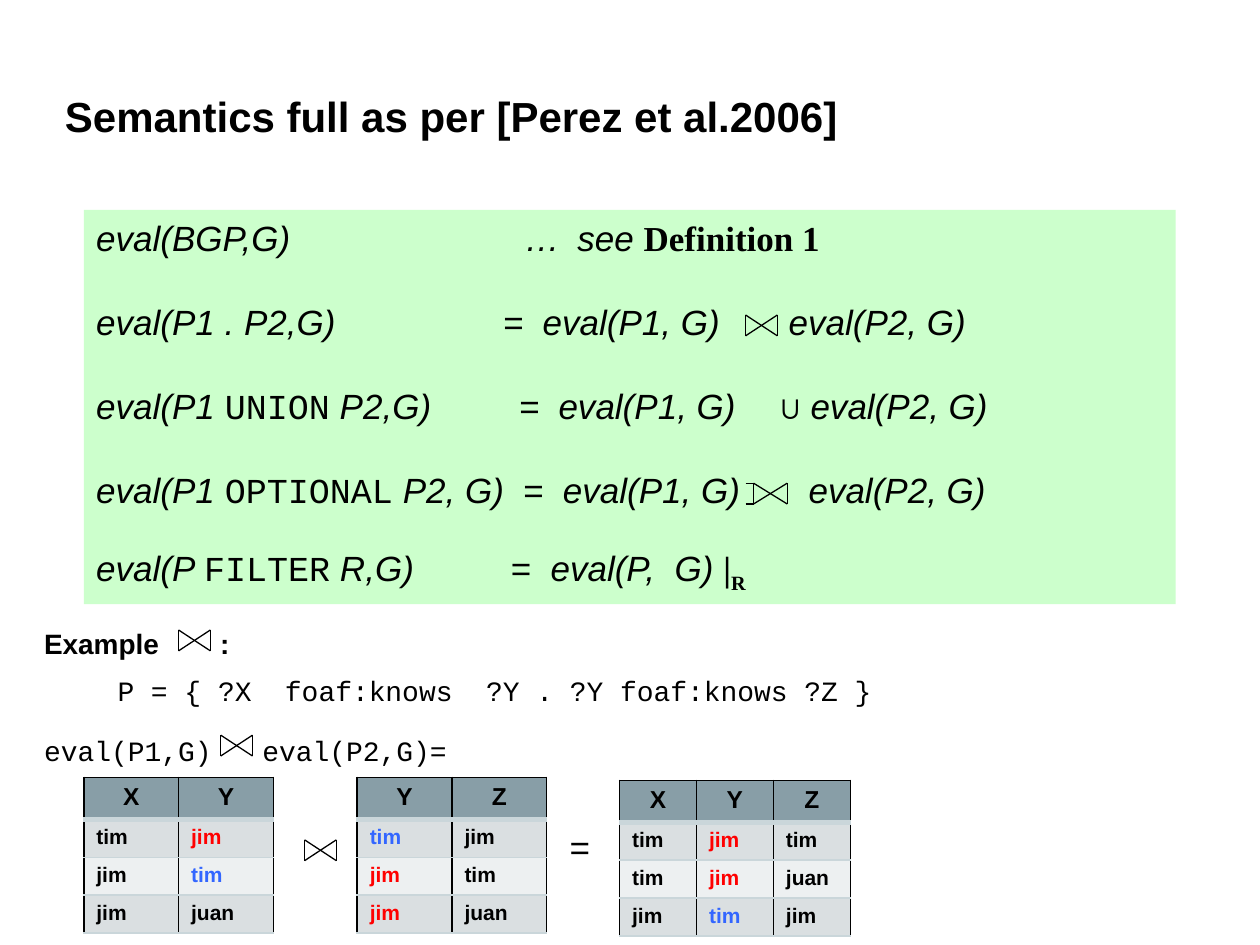
from dataclasses import dataclass

import lxml.etree
import pptx
import pptx.dml.color
import pptx.enum.shapes
import pptx.enum.text
import pptx.oxml.ns
import pptx.util

Cm = pptx.util.Cm
Pt = pptx.util.Pt
qn = pptx.oxml.ns.qn


@dataclass(frozen=True)
class Theme:
    sans: str = "Arial"
    mono: str = "Courier New"
    serif: str = "Times New Roman"
    black: str = "000000"
    white: str = "FFFFFF"
    rule_fill: str = "CCFFCC"
    header: str = "889EA7"
    bands: tuple[str, str] = ("DADFE1", "EDF0F1")
    row_border: str = "CAD6DA"
    title: int = 24
    rule: int = 20
    body: int = 16
    table_head: int = 14
    table_body: int = 12


T = Theme()
JOIN_COLORS = {"jim": "FF0000", "tim": "3366FF"}


@dataclass(frozen=True)
class Run:
    text: str
    font: str = T.sans
    bold: bool = False
    italic: bool = False
    baseline: int = 0


@dataclass(frozen=True)
class Line:
    """One line of text; tabs are distances in cm from the text edge."""
    runs: tuple[Run, ...]
    tabs: tuple[float, ...] = ()


@dataclass(frozen=True)
class Bindings:
    left: float
    top: float
    col_width: float
    rows: tuple[str, ...]


def term(text: str) -> Run:
    return Run(text, italic=True)


def code(text: str) -> Run:
    return Run(text, T.mono)


def bold(text: str, font: str = T.sans, baseline: int = 0) -> Run:
    return Run(text, font, bold=True, baseline=baseline)


RULES = (
    Line((term("eval(BGP,G)\t…\tsee "), bold("Definition 1", T.serif)), (8.64, 9.7)),
    Line((term("eval(P1 . P2,G)\t=\teval(P1, G)\teval(P2, G)"),), (8.2, 9, 13.96)),
    Line((term("eval(P1 "), code("UNION"), term(" P2,G)\t=\teval(P1, G)\t"),
          Run("∪", T.serif), term("\teval(P2, G)")), (8.52, 9.32, 13.64, 14.4)),
    Line((term("eval(P1 "), code("OPTIONAL"),
          term(" P2, G)\t=\teval(P1, G)\teval(P2, G)")), (8.6, 9.41, 14.36)),
    Line((term("eval(P "), code("FILTER"), term(" R,G)\t=\teval(P,\tG) "),
          bold("|", T.serif), bold("R", T.serif, -25000)), (8.35, 9.16, 11.66)),
)
EXAMPLE = (
    Line((bold("Example\t:"),), (3.55,)),
    Line((code("eval(P1,G)\teval(P2,G)="),), (4.4,)),
)
TABLES = (
    Bindings(1.69, 15.67, 1.91, ("X Y", "tim jim", "jim tim", "jim juan")),
    Bindings(7.2, 15.67, 1.91, ("Y Z", "tim jim", "jim tim", "jim juan")),
    Bindings(12.49, 15.73, 1.55,
             ("X Y Z", "tim jim tim", "tim jim juan", "jim tim jim")),
)
JOINS = ((15.03, 6.35), (3.6, 12.7), (4.45, 14.82), (6.14, 16.93))
JOIN_HEIGHT = 0.42


def rgb(value: str) -> pptx.dml.color.RGBColor:
    return pptx.dml.color.RGBColor.from_string(value)


def add_run(p, run: Run, size: int, color: str = T.black) -> None:
    r = p.add_run()
    r.text = run.text
    f = r.font
    f.name, f.size, f.bold, f.italic = run.font, Pt(size), run.bold, run.italic
    f.color.rgb = rgb(color)
    if run.baseline:
        f._element.set("baseline", str(run.baseline))


def add_tabs(p, tabs: tuple[float, ...]) -> None:
    tab_list = lxml.etree.SubElement(p._p.get_or_add_pPr(), qn("a:tabLst"))
    for pos in tabs:
        lxml.etree.SubElement(tab_list, qn("a:tab"), pos=str(Cm(pos)), algn="l")


def add_text(s, box: tuple[float, ...], lines: tuple[Line, ...], size: int,
             fill: str | None = None, gap: float = 0, line_height: float | None = None,
             anchor=pptx.enum.text.MSO_ANCHOR.TOP, wrap: bool = True) -> None:
    sp = s.shapes.add_textbox(*map(Cm, box))
    if fill:
        sp.fill.solid()
        sp.fill.fore_color.rgb = rgb(fill)
    tf = sp.text_frame
    tf.word_wrap, tf.vertical_anchor = wrap, anchor
    for i, line in enumerate(lines):
        p = tf.add_paragraph() if i else tf.paragraphs[0]
        if line.tabs:
            add_tabs(p, line.tabs)
        if i:
            p.space_before = Pt(gap)
        if line_height:
            p.line_spacing = Pt(line_height)
        for run in line.runs:
            add_run(p, run, size)


def add_line(s, x1: float, y1: float, x2: float, y2: float) -> None:
    c = s.shapes.add_connector(pptx.enum.shapes.MSO_CONNECTOR.STRAIGHT,
                               Cm(x1), Cm(y1), Cm(x2), Cm(y2))
    c.line.color.rgb, c.line.width = rgb(T.black), Pt(0.75)
    lxml.etree.SubElement(c._element.spPr, qn("a:effectLst"))


def add_join(s, left: float, top: float, width: float = 0.64) -> None:
    """Draw the bow-tie join operator: two diagonals and two sides."""
    right, bottom = left + width, top + JOIN_HEIGHT
    add_line(s, left, top, right, bottom)
    add_line(s, left, bottom, right, top)
    for x in (left, right):
        add_line(s, x, bottom, x, top)


def add_outer_join(s, left: float, top: float) -> None:
    stub = 0.16
    add_join(s, left + stub, top, 0.68)
    for y in (top, top + JOIN_HEIGHT):
        add_line(s, left, y, left + stub, y)


def add_border(cell, side: str, color: str, width: float) -> None:
    ln = lxml.etree.SubElement(cell._tc.get_or_add_tcPr(), qn(f"a:ln{side}"),
                               w=str(Pt(width)))
    solid = lxml.etree.SubElement(ln, qn("a:solidFill"))
    lxml.etree.SubElement(solid, qn("a:srgbClr"), val=color)


def add_bindings(s, spec: Bindings) -> None:
    """Draw a solution table; values of the join variable Y are coloured."""
    rows = [row.split() for row in spec.rows]
    names = rows[0]
    heights = [0.84] + [0.76] * (len(rows) - 1)
    table = s.shapes.add_table(
        len(rows), len(names), Cm(spec.left), Cm(spec.top),
        Cm(spec.col_width * len(names)), Cm(sum(heights))).table
    table.horz_banding = False
    for col in table.columns:
        col.width = Cm(spec.col_width)
    for i, row in enumerate(rows):
        table.rows[i].height = Cm(heights[i])
        head = i == 0
        for j, value in enumerate(row):
            cell = table.cell(i, j)
            for side in "LR":
                add_border(cell, side, T.black, 1)
            add_border(cell, "T", T.black if head else T.row_border, 3 if i == 1 else 1)
            add_border(cell, "B", T.row_border, 3 if head else 1)
            cell.fill.solid()
            cell.fill.fore_color.rgb = rgb(T.header if head else T.bands[(i - 1) % 2])
            p = cell.text_frame.paragraphs[0]
            if head:
                p.alignment = pptx.enum.text.PP_ALIGN.CENTER
            color = JOIN_COLORS.get(value, T.black) if names[j] == "Y" else T.black
            add_run(p, bold(value), T.table_head if head else T.table_body, color)


def main() -> None:
    prs = pptx.Presentation()
    prs.slide_width, prs.slide_height = Cm(25.4), Cm(19.05)
    s = prs.slides.add_slide(prs.slide_layouts[6])
    add_text(s, (1.06, 0.64, 22.28, 2.33),
             (Line((bold("Semantics full as per [Perez et al.2006]"),)),),
             T.title, anchor=pptx.enum.text.MSO_ANCHOR.BOTTOM)
    add_text(s, (1.69, 4.23, 22.01, 7.95), RULES, T.rule, T.rule_fill,
             gap=24, line_height=24)
    add_outer_join(s, 15.03, 9.74)
    for spec in TABLES:
        add_bindings(s, spec)
    add_text(s, (0.64, 12.5, 24.5, 3.1), EXAMPLE, T.body, gap=42)
    for left, top in JOINS:
        add_join(s, left, top)
    add_text(s, (11.23, 16.51, 0.94, 1.12), (Line((code("="),)),), T.rule, wrap=False)
    add_text(s, (2.12, 13.46, 16.31, 0.94),
             (Line((code("P = { ?X  foaf:knows  ?Y . ?Y foaf:knows ?Z }"),)),),
             T.body, T.white)
    prs.save("out.pptx")


if __name__ == "__main__":
    main()
